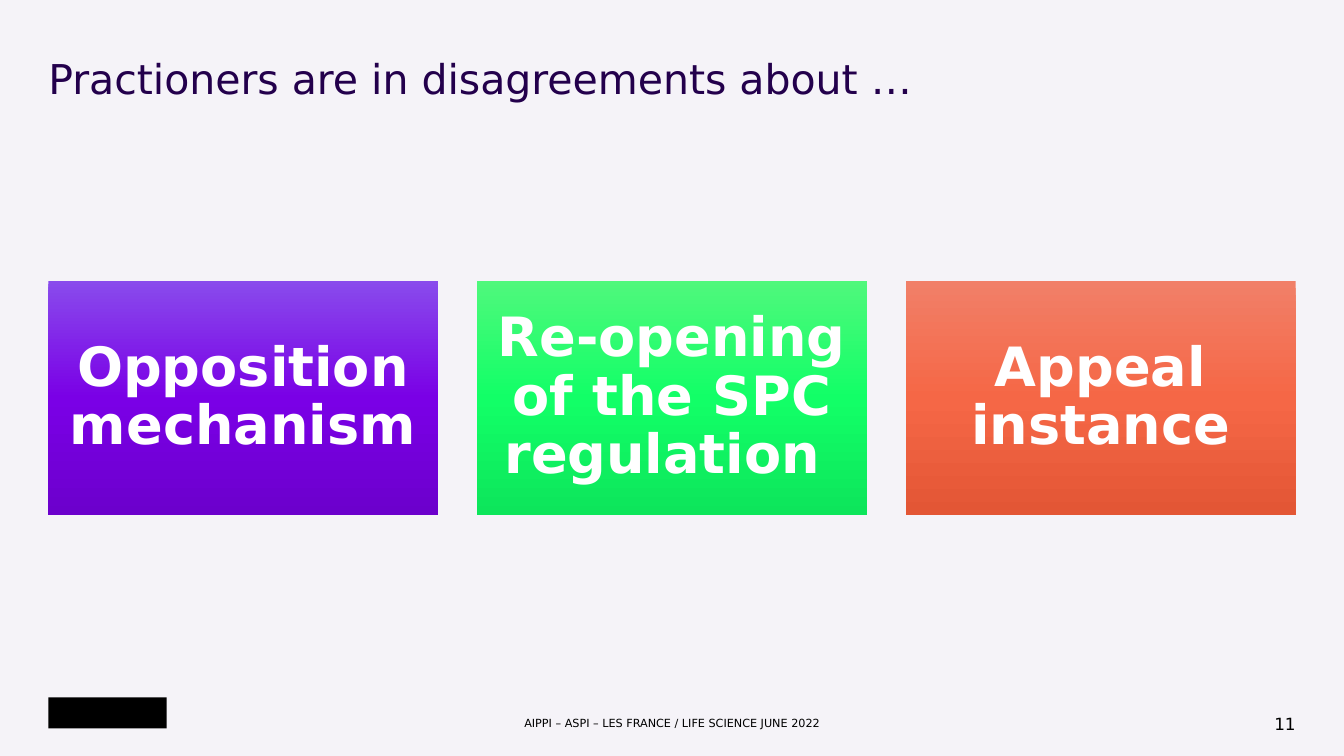
from copy import deepcopy

from pptx import Presentation
from pptx.dml.color import RGBColor
from pptx.enum.shapes import MSO_SHAPE
from pptx.enum.text import MSO_ANCHOR, MSO_AUTO_SIZE, PP_ALIGN
from pptx.oxml.ns import qn
from pptx.util import Inches, Pt

RECTANGLE = MSO_SHAPE.RECTANGLE
TOP, MIDDLE = MSO_ANCHOR.TOP, MSO_ANCHOR.MIDDLE
LEFT, CENTER, RIGHT = PP_ALIGN.LEFT, PP_ALIGN.CENTER, PP_ALIGN.RIGHT
NO_AUTOFIT = MSO_AUTO_SIZE.NONE

FONT = "DejaVu Sans"
BACKGROUND = RGBColor(0xF5, 0xF3, 0xF8)
INK = RGBColor(0x23, 0x00, 0x4C)
BLACK = RGBColor(0x00, 0x00, 0x00)
WHITE = RGBColor(0xFF, 0xFF, 0xFF)
PURPLES = [RGBColor(0x89, 0x4B, 0xEC), RGBColor(0x7A, 0x00, 0xE6), RGBColor(0x6C, 0x00, 0xCC)]
GREENS = [RGBColor(0x4F, 0xF8, 0x7C), RGBColor(0x12, 0xFF, 0x67), RGBColor(0x0D, 0xE5, 0x5B)]
ORANGES = [RGBColor(0xF1, 0x7F, 0x68), RGBColor(0xF5, 0x67, 0x46), RGBColor(0xE3, 0x56, 0x35)]

MARGIN = 0.36
CARD_WIDTH, CARD_HEIGHT, CARD_TOP, CARD_GAP = 2.9, 1.74, 2.09, 0.29


def write(holder, text, size, color, align, anchor, inset=0, bold=False, spacing=1.0):
    frame = holder.text_frame
    frame.text = text
    frame.word_wrap = True
    frame.auto_size = NO_AUTOFIT
    frame.vertical_anchor = anchor
    frame.margin_left = frame.margin_right = Inches(inset)
    frame.margin_top = frame.margin_bottom = Inches(inset)
    paragraph = frame.paragraphs[0]
    paragraph.alignment = align
    paragraph.line_spacing = spacing
    font = paragraph.runs[0].font
    font.name = FONT
    font.size = Pt(size)
    font.bold = bold
    font.color.rgb = color


prs = Presentation()
prs.slide_width = Inches(10)
prs.slide_height = Inches(10 * 9 / 16)
slide = prs.slides.add_slide(prs.slide_layouts[5])
slide.background.fill.solid()
slide.background.fill.fore_color.rgb = BACKGROUND

title = slide.shapes.title
title.left, title.top = Inches(MARGIN), Inches(0.44)
title.width, title.height = Inches(9.28), Inches(0.61)
write(title, "Practioners are in disagreements about …", 22, INK, LEFT, TOP, spacing=0.9)

topics = [
    ("Opposition mechanism", PURPLES),
    ("Re-opening of the SPC regulation ", GREENS),
    ("Appeal instance", ORANGES),
]
for column, (topic, shades) in enumerate(topics):
    card_left = MARGIN + column * (CARD_WIDTH + CARD_GAP)
    card = slide.shapes.add_shape(
        RECTANGLE, Inches(card_left), Inches(CARD_TOP), Inches(CARD_WIDTH), Inches(CARD_HEIGHT)
    )
    card.shadow.inherit = False
    card.line.fill.background()
    card.fill.gradient()
    card.fill.gradient_angle = 270
    stop_list = card._element.spPr.find(qn("a:gradFill")).find(qn("a:gsLst"))
    stop_list.append(deepcopy(stop_list[-1]))
    for stop, shade, position in zip(card.fill.gradient_stops, shades, (0, 0.5, 1)):
        stop.color.rgb = shade
        stop.position = position
    write(card, topic, 29, WHITE, CENTER, MIDDLE, inset=0.12, bold=True, spacing=0.9)

logo_block = slide.shapes.add_shape(
    RECTANGLE, Inches(MARGIN), Inches(5.19), Inches(0.88), Inches(0.23)
)
logo_block.shadow.inherit = False
logo_block.fill.solid()
logo_block.fill.fore_color.rgb = BLACK
logo_block.line.fill.background()

footer = slide.shapes.add_textbox(Inches(2.35), Inches(5.31), Inches(5.3), Inches(0.14))
write(footer, "AIPPI – ASPI – LES FRANCE / LIFE SCIENCE JUNE 2022", 6, BLACK, CENTER, MIDDLE)

page_number = slide.shapes.add_textbox(Inches(9.12), Inches(5.27), Inches(0.52), Inches(0.23))
write(page_number, "11", 9, BLACK, RIGHT, MIDDLE)

prs.save("out.pptx")
